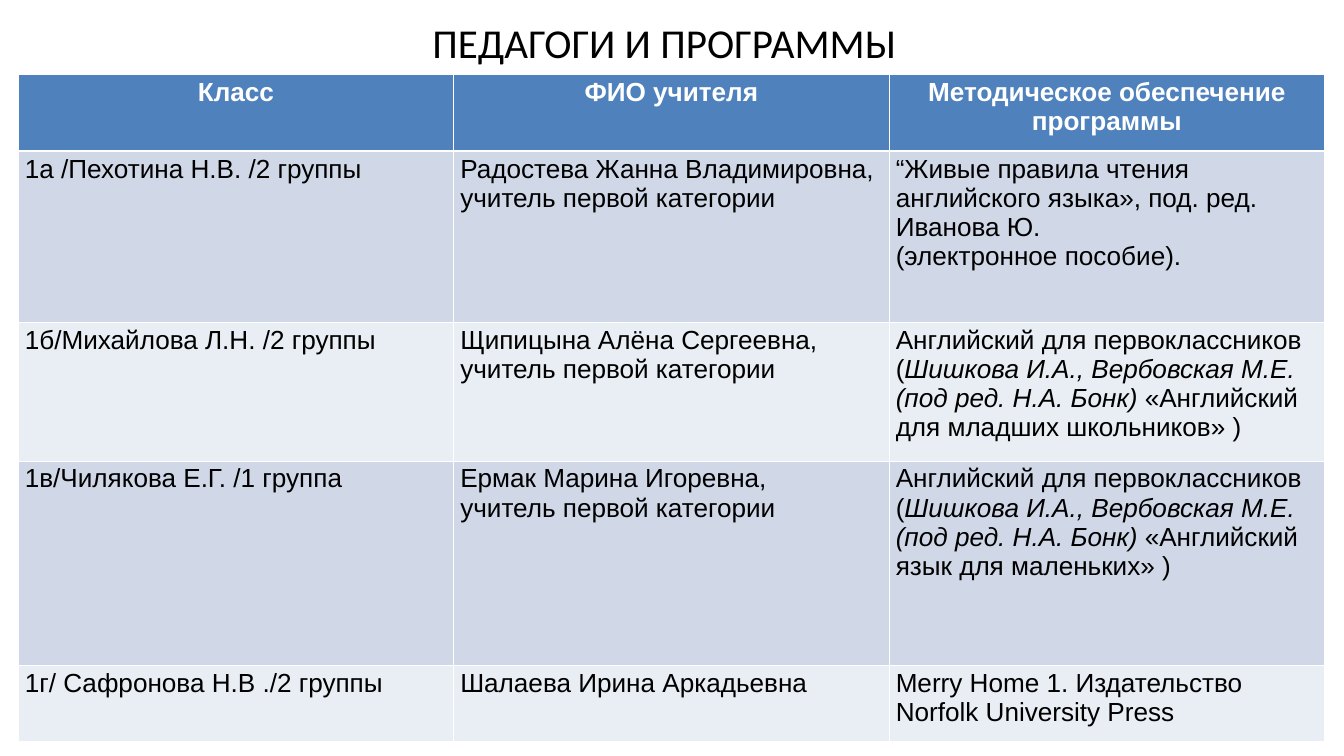
from lxml import etree
from pptx import Presentation
from pptx import util as u
from pptx.dml.color import RGBColor
from pptx.enum import text
from pptx.oxml import ns

THEME = {
    "heading_font": "Calibri", "heading_size": u.Pt(44),
    "body_font": "Arial", "body_size": u.Pt(28),
    "ink": RGBColor.from_string("000000"),
    "header_ink": RGBColor.from_string("FFFFFF"),
    "header_fill": RGBColor.from_string("4F81BD"),
    "bands": [RGBColor.from_string("D0D8E8"), RGBColor.from_string("E9EDF4")],
    "rule": "FFFFFF",
}

# Each cell is a list of paragraphs; text between asterisks is italic
AUTHORS = "(*Шишкова И.А., Вербовская М.Е. (под ред. Н.А. Бонк)*"
COURSE = "Английский для первоклассников"
CATEGORY = "учитель первой категории"
ROWS = [
    [["Класс"], ["ФИО учителя"], ["Методическое обеспечение программы"]],
    [["1а /Пехотина Н.В. /2 группы"],
     [f"Радостева Жанна Владимировна, {CATEGORY}"],
     ["“Живые правила чтения английского языка», под. ред. Иванова Ю.",
      "(электронное пособие)."]],
    [["1б/Михайлова Л.Н. /2 группы"],
     [f"Щипицына Алёна Сергеевна, {CATEGORY}"],
     [COURSE, f"{AUTHORS} «Английский для младших школьников» )"]],
    [["1в/Чилякова Е.Г. /1 группа"],
     ["Ермак Марина Игоревна,", CATEGORY],
     [COURSE, f"{AUTHORS} «Английский язык для маленьких» )"]],
    [["1г/ Сафронова Н.В ./2 группы"],
     ["Шалаева Ирина Аркадьевна"],
     ["Merry Home 1. Издательство Norfolk University Press"]],
]
ROW_HEIGHTS = [1.14, 2.55, 2.06, 3.04, 1.14]
COLUMN_WIDTH = 6.48


def add_borders(cell, bottom_width):
    """Rule all four sides of a cell, with its own weight at the bottom."""
    properties = cell._tc.get_or_add_tcPr()
    for side, width in (("L", 1), ("R", 1), ("T", 1), ("B", bottom_width)):
        line = etree.SubElement(properties, ns.qn(f"a:ln{side}"), w=str(u.Pt(width)))
        fill = etree.SubElement(line, ns.qn("a:solidFill"))
        etree.SubElement(fill, ns.qn("a:srgbClr"), val=THEME["rule"])


def write_paragraphs(frame, lines, font, size, color, bold=False, align=None):
    """Fill a text frame, one paragraph per line."""
    for index, line in enumerate(lines):
        paragraph = frame.add_paragraph() if index else frame.paragraphs[0]
        paragraph.alignment = align
        paragraph.font.name, paragraph.font.size = font, size
        paragraph.font.color.rgb, paragraph.font.bold = color, bold
        for part, piece in enumerate(line.split("*")):
            if piece:
                run = paragraph.add_run()
                run.text = piece
                if part % 2:
                    run.font.italic = True


deck = Presentation()
deck.slide_width, deck.slide_height = u.Inches(20), u.Inches(11.25)
slide = deck.slides.add_slide(deck.slide_layouts[6])

# Heading
heading = slide.shapes.add_textbox(
    u.Inches(3.19), 0, u.Inches(13.4), u.Inches(1.25)).text_frame
heading.word_wrap = True
heading.vertical_anchor = text.MSO_ANCHOR.MIDDLE
write_paragraphs(heading, ["ПЕДАГОГИ И ПРОГРАММЫ"], THEME["heading_font"],
                 THEME["heading_size"], THEME["ink"], align=text.PP_ALIGN.CENTER)

# Teachers and programmes
programmes = slide.shapes.add_table(
    len(ROWS), len(ROWS[0]), u.Inches(0.27), u.Inches(1.11),
    u.Inches(COLUMN_WIDTH * len(ROWS[0])), u.Inches(sum(ROW_HEIGHTS))).table
for column in programmes.columns:
    column.width = u.Inches(COLUMN_WIDTH)

for r, (row, height) in enumerate(zip(ROWS, ROW_HEIGHTS)):
    programmes.rows[r].height = u.Inches(height)
    header = r == 0
    for c, lines in enumerate(row):
        cell = programmes.cell(r, c)
        add_borders(cell, 3 if header else 1)
        cell.fill.solid()
        cell.fill.fore_color.rgb = (
            THEME["header_fill"] if header else THEME["bands"][(r - 1) % 2])
        write_paragraphs(cell.text_frame, lines, THEME["body_font"], THEME["body_size"],
                         THEME["header_ink"] if header else THEME["ink"], bold=header,
                         align=text.PP_ALIGN.CENTER if header else None)

deck.save("out.pptx")
